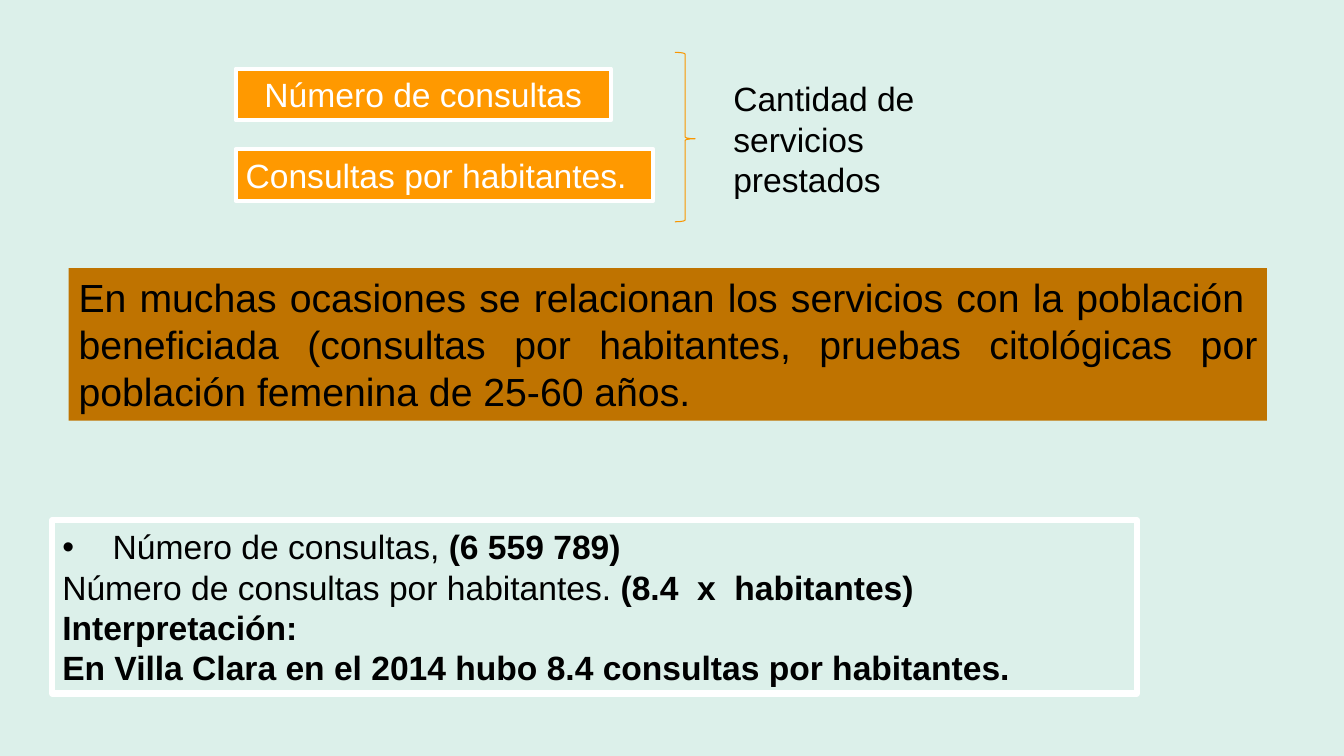
from pptx import Presentation
from pptx.dml.color import RGBColor
from pptx.enum.shapes import MSO_SHAPE as Kind
from pptx.enum.text import MSO_ANCHOR as Anchor, PP_ALIGN as Align
from pptx.oxml.ns import qn
from pptx.util import Cm, Pt
from lxml.etree import SubElement

INK = "000000"
WHITE = "FFFFFF"
ORANGE = "FF9900"


def paint(target, color):
    target.solid()
    target.fore_color.rgb = RGBColor.from_string(color)


def draw(slide, kind, box, fill=None, line=None, width=0):
    shape = slide.shapes.add_shape(kind, *[Cm(n) for n in box])
    shape.shadow.inherit = False
    if fill:
        paint(shape.fill, fill)
    else:
        shape.fill.background()
    if line:
        paint(shape.line.fill, line)
        shape.line.width = Pt(width)
    else:
        shape.line.fill.background()
    return shape


def write(shape, rows, size=24, color=INK, align=Align.LEFT, anchor=Anchor.TOP):
    frame = shape.text_frame
    frame.word_wrap = True
    frame.vertical_anchor = anchor
    for i, row in enumerate(rows):
        para = frame.add_paragraph() if i else frame.paragraphs[0]
        para.alignment = align
        for text, bold in row:
            run = para.add_run()
            run.text = text
            font = run.font
            font.name, font.size, font.bold = "Arial", Pt(size), bold
            paint(font.fill, color)


def add_bullet(para, indent):
    props = para._p.get_or_add_pPr()
    props.set("marL", str(Cm(indent)))
    props.set("indent", str(-Cm(indent)))
    SubElement(props, qn("a:buFont"), typeface="Arial")
    SubElement(props, qn("a:buChar"), char="•")


def add_counts(slide, left, top, width, height):
    labels = [
        ("Número de consultas", 0.41, 9.45, Align.CENTER),
        ("Consultas por habitantes.", 2.44, 10.52, Align.LEFT),
    ]
    for text, drop, span, align in labels:
        box = (left, top + drop, span, 1.3)
        label = draw(slide, Kind.RECTANGLE, box, ORANGE, WHITE, 3)
        write(label, [[(text, False)]], 24, WHITE, align, Anchor.MIDDLE)

    brace = draw(slide, Kind.RIGHT_BRACE, (left + 11.07, top, 0.51, height),
                 line="F99600", width=0.75)
    brace.adjustments[0] = 0.08
    brace.adjustments[1] = 0.51

    shift = 12.29
    box = (left + shift, top + 0.53, width - shift, 3.33)
    total = slide.shapes.add_textbox(*[Cm(n) for n in box])
    write(total, [[("Cantidad de servicios prestados", False)]])


def add_note(slide, *box):
    text = ("En muchas ocasiones se relacionan los servicios con la población  "
            "beneficiada (consultas por habitantes, pruebas citológicas por "
            "población femenina de 25-60 años.")
    note = draw(slide, Kind.RECTANGLE, box, "BF7300")
    write(note, [[(text, False)]], 28, align=Align.JUSTIFY)


def add_result(slide, *box):
    rows = [
        [("Número de consultas, ", False), ("(6 559 789)", True)],
        [("Número de consultas por habitantes. ", False),
         ("(8.4  x  habitantes)", True)],
        [("Interpretación:", True)],
        [("En Villa Clara en el 2014 hubo 8.4 consultas por habitantes.", True)],
    ]
    panel = draw(slide, Kind.RECTANGLE, box, line=WHITE, width=4.5)
    write(panel, rows, align=Align.JUSTIFY, anchor=Anchor.MIDDLE)
    add_bullet(panel.text_frame.paragraphs[0], 1.27)


def main():
    deck = Presentation()
    deck.slide_width, deck.slide_height = Cm(33.87), Cm(19.05)
    slide = deck.slides.add_slide(deck.slide_layouts[6])
    paint(slide.background.fill, "DCF0EA")
    add_result(slide, 1.32, 13.11, 27.33, 4.37)
    add_counts(slide, 5.94, 1.32, 19.48, 4.27)
    add_note(slide, 1.73, 6.76, 30.2, 3.84)
    deck.save("out.pptx")


if __name__ == "__main__":
    main()
